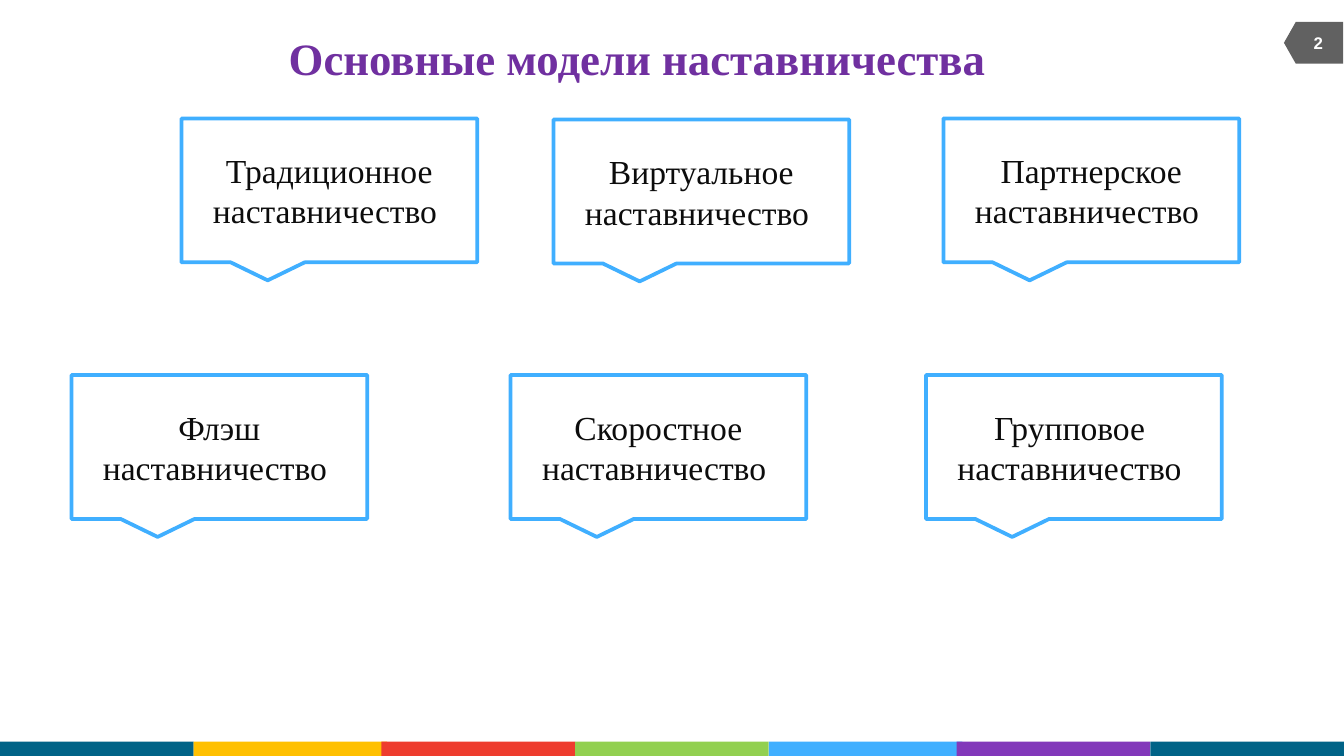
import pptx
import pptx.util
import pptx.dml.color
import pptx.enum.shapes
import pptx.enum.text

Cm = pptx.util.Cm
Pt = pptx.util.Pt
KIND = pptx.enum.shapes.MSO_SHAPE
ALIGN = pptx.enum.text.PP_ALIGN
MID = pptx.enum.text.MSO_ANCHOR.MIDDLE
TOP = pptx.enum.text.MSO_ANCHOR.TOP


def paint(target, color):
    if hasattr(target, "solid"):
        target.solid()
        target = target.fore_color
    else:
        target = target.color
    target.rgb = pptx.dml.color.RGBColor.from_string(color)


def write(shape, text, color, frame, font):
    body = shape.text_frame
    body.text = text
    for key, value in frame.items():
        setattr(body, key, value)
    for para in body.paragraphs:
        para.alignment = ALIGN.CENTER
        for run in para.runs:
            for key, value in font.items():
                setattr(run.font, key, value)
            paint(run.font, color)


deck = pptx.Presentation()
deck.slide_width = Cm(25.4)
deck.slide_height = Cm(14.29)
slide = deck.slides.add_slide(deck.slide_layouts[6])
shapes = slide.shapes

bars = [
    (0, "006387"),
    (3.66, "FFC000"),
    (7.21, "EE3C2E"),
    (10.87, "92D050"),
    (14.53, "40AFFF"),
    (18.08, "8238BA"),
    (21.74, "006387"),
]
for left, color in bars:
    bar = shapes.add_shape(KIND.RECTANGLE, Cm(left), Cm(14.02), Cm(3.66), Cm(0.27))
    bar.shadow.inherit = False
    bar.line.fill.background()
    paint(bar.fill, color)

tag = shapes.add_shape(
    KIND.FLOWCHART_OFFPAGE_CONNECTOR, Cm(24.43), Cm(0.25), Cm(0.79), Cm(1.12)
)
tag.rotation = 90
tag.shadow.inherit = False
tag.line.fill.background()
paint(tag.fill, "616161")

page = shapes.add_textbox(Cm(24.38), Cm(0.43), Cm(1.07), Cm(0.76))
write(
    page, "2", "FFFFFF",
    {"word_wrap": True, "vertical_anchor": MID},
    {"name": "Arial", "size": Pt(9), "bold": True},
)

title = shapes.add_textbox(Cm(5.13), Cm(0.46), Cm(13.82), Cm(1.27))
write(
    title, "Основные модели наставничества", "7030A0",
    {"word_wrap": False, "vertical_anchor": TOP},
    {"name": "Times New Roman", "size": Pt(24), "bold": True},
)

models = [
    (3.43, 2.24, "Традиционное\nнаставничество "),
    (10.46, 2.26, "Виртуальное\nнаставничество "),
    (17.83, 2.24, "Партнерское наставничество "),
    (1.35, 7.09, "Флэш наставничество "),
    (9.65, 7.09, "Скоростное\nнаставничество "),
    (17.5, 7.09, "Групповое \nнаставничество "),
]
for left, top, text in models:
    box = shapes.add_shape(
        KIND.RECTANGULAR_CALLOUT, Cm(left), Cm(top), Cm(5.59), Cm(2.72)
    )
    box.shadow.inherit = False
    paint(box.fill, "FFFFFF")
    paint(box.line, "40AFFF")
    box.line.width = Pt(2)
    write(
        box, text, "0C0C0C",
        {"word_wrap": True, "vertical_anchor": MID},
        {"name": "Times New Roman", "size": Pt(18)},
    )

deck.save("out.pptx")
